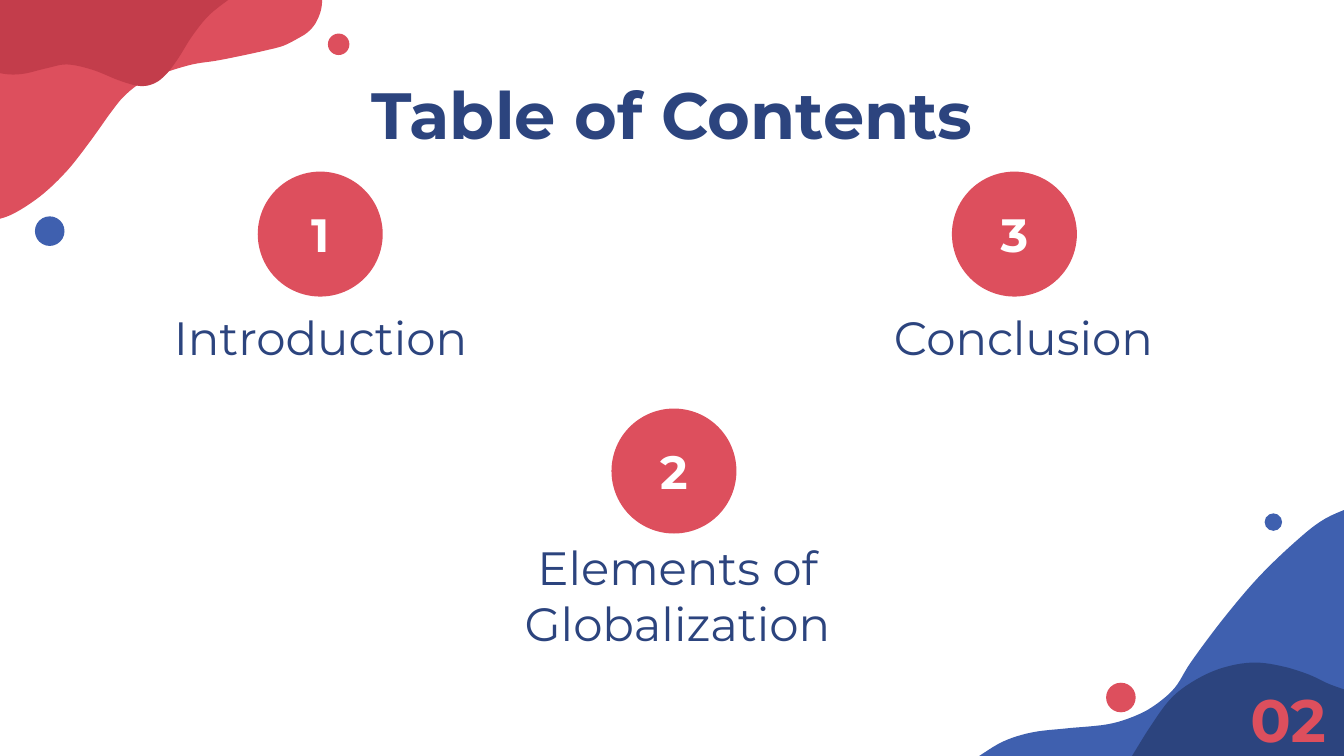
from dataclasses import dataclass

from pptx import Presentation
from pptx.dml.color import RGBColor
from pptx.enum.shapes import MSO_SHAPE
from pptx.enum.text import MSO_ANCHOR, MSO_AUTO_SIZE, PP_ALIGN
from pptx.util import Emu, Inches, Pt

# Grid: 100 columns across a 16:9 slide, square cells
WIDTH = Inches(10)
HEIGHT = Emu(WIDTH * 9 // 16)
CELL = WIDTH / 100
FONT = "Montserrat"
COLORS = {
    "red": "DD4F5D",
    "dark_red": "C33D4B",
    "blue": "3F60AF",
    "navy": "2C447E",
    "white": "FFFFFF",
}
BADGE_SIZE = 9.3
NUMBER_BOX = (8, 5)
LABEL_WIDTH = 31.4
CURVE_STEPS = 6

Point = tuple[float, float]


@dataclass
class Wave:
    color: str
    curve: list[Point]
    corners: list[Point]


@dataclass
class Dot:
    color: str
    x: float
    y: float
    size: float


@dataclass
class Topic:
    number: str
    label: str
    center_x: float
    center_y: float
    label_x: float
    label_y: float
    label_height: float


WAVES = [
    Wave("red",
         [(24, -0.4), (23.9, 0.7), (23.5, 1.7), (22.9, 2.4), (22.1, 2.9), (21.1, 3.4),
          (20, 3.7), (18.2, 4.1), (16.2, 4.5), (14.3, 4.8), (12.3, 5.4), (10.6, 6.1),
          (9.3, 7.1), (8.3, 8.3), (6.8, 10.4), (5, 12.7), (3, 14.6), (0.8, 16), (-1, 16.5)],
         [(-1, -0.1)]),
    Wave("blue",
         [(72.5, 56.5), (74.6, 55.2), (76.8, 54.5), (79.4, 54.2), (82.4, 53.9), (84.4, 53.3),
          (85.9, 52.5), (87.4, 51.2), (88.6, 49.3), (90.9, 46.2), (93.6, 43), (96.4, 40.3),
          (98.6, 38.6), (101.2, 37.5)],
         [(100.3, 56.5)]),
    Wave("navy",
         [(83.9, 56.8), (85.7, 53.9), (87.3, 51.8), (89.3, 50.4), (91.3, 49.6), (93.4, 49.3),
          (95.5, 49.6), (97.4, 50.2), (98.9, 50.9), (100.6, 51.5)],
         [(100.6, 56.8)]),
    Wave("dark_red",
         [(17.4, -0.3), (15.6, 1.1), (14.3, 2.7), (13.3, 4.3), (12.4, 5.5), (11.5, 6.2),
          (10.4, 6.4), (8.9, 6), (6.9, 5.2), (5, 4.8), (3.4, 5.1), (1.7, 5.5), (0.3, 5.5),
          (-1.2, 5.1)],
         [(-1.2, -0.3)]),
]
DOTS = [
    Dot("red", 82.3, 50.8, 2.2),
    Dot("blue", 94.1, 38.2, 1.3),
    Dot("blue", 2.6, 16.1, 2.2),
    Dot("red", 24.4, 2.5, 1.6),
]
TOPICS = [
    Topic("1", "Introduction", 23.83, 17.42, 23.85, 25.1, 4),
    Topic("2", "Elements of Globalization", 50.15, 35.05, 50.4, 44.25, 9.3),
    Topic("3", "Conclusion", 75.48, 17.42, 76.15, 25.1, 4),
]


def cells(count: float) -> Emu:
    return Emu(round(count * CELL))


def paint(shape, color: str) -> None:
    shape.shadow.inherit = False
    shape.fill.solid()
    shape.fill.fore_color.rgb = RGBColor.from_string(COLORS[color])
    shape.line.fill.background()


def smooth(points: list[Point]) -> list[Point]:
    """Catmull-Rom curve through the points."""
    padded = [points[0], *points, points[-1]]
    curve = [points[0]]
    for a, b, c, d in zip(padded, padded[1:], padded[2:], padded[3:]):
        for step in range(1, CURVE_STEPS + 1):
            t = step / CURVE_STEPS
            curve.append(tuple(
                (2 * q + (r - p) * t + (2 * p - 5 * q + 4 * r - s) * t ** 2
                 + (3 * q - p - 3 * r + s) * t ** 3) / 2
                for p, q, r, s in zip(a, b, c, d)))
    return curve


def draw_wave(slide, wave: Wave) -> None:
    outline = [(cells(x), cells(y)) for x, y in smooth(wave.curve) + wave.corners]
    builder = slide.shapes.build_freeform(*outline[0])
    builder.add_line_segments(outline[1:], close=True)
    paint(builder.convert_to_shape(), wave.color)


def draw_dot(slide, dot: Dot) -> None:
    circle = slide.shapes.add_shape(
        MSO_SHAPE.OVAL, cells(dot.x), cells(dot.y), cells(dot.size), cells(dot.size))
    paint(circle, dot.color)


def write(shape, text: str, size: int, color: str, bold: bool = False) -> None:
    frame = shape.text_frame
    frame.text = text
    frame.word_wrap = True
    frame.auto_size = MSO_AUTO_SIZE.NONE
    frame.vertical_anchor = MSO_ANCHOR.MIDDLE
    frame.margin_left = frame.margin_right = Inches(0.1)
    frame.margin_top = frame.margin_bottom = Inches(0.1)
    paragraph = frame.paragraphs[0]
    paragraph.alignment = PP_ALIGN.CENTER
    font = paragraph.runs[0].font
    font.name, font.size, font.bold = FONT, Pt(size), bold
    font.color.rgb = RGBColor.from_string(COLORS[color])


def add_centered_box(slide, x: float, y: float, width: float, height: float):
    return slide.shapes.add_textbox(
        cells(x - width / 2), cells(y - height / 2), cells(width), cells(height))


def draw_topic(slide, topic: Topic) -> None:
    half = BADGE_SIZE / 2
    draw_dot(slide, Dot("red", topic.center_x - half, topic.center_y - half, BADGE_SIZE))
    number = add_centered_box(slide, topic.center_x, topic.center_y, *NUMBER_BOX)
    write(number, topic.number, 25, "white", bold=True)
    label = add_centered_box(
        slide, topic.label_x, topic.label_y, LABEL_WIDTH, topic.label_height)
    write(label, topic.label, 25, "navy")


def main() -> None:
    deck = Presentation()
    deck.slide_width, deck.slide_height = WIDTH, HEIGHT
    slide = deck.slides.add_slide(deck.slide_layouts[5])

    # Corner decoration
    for wave in WAVES[:2]:
        draw_wave(slide, wave)
    for dot in DOTS:
        draw_dot(slide, dot)
    for wave in WAVES[2:]:
        draw_wave(slide, wave)

    # Title
    title = slide.shapes.title
    title.left, title.top = cells(7.9), cells(5.93)
    title.width, title.height = cells(84.2), cells(5)
    write(title, "Table of Contents", 35, "navy", bold=True)

    # Contents
    for topic in TOPICS:
        draw_topic(slide, topic)

    # Page number
    page_number = add_centered_box(slide, 95.85, 53.55, 8.3, 6.4)
    write(page_number, "02", 32, "red", bold=True)
    page_number.text_frame.word_wrap = False
    page_number.text_frame.auto_size = MSO_AUTO_SIZE.SHAPE_TO_FIT_TEXT
    page_number.text_frame.vertical_anchor = MSO_ANCHOR.TOP
    page_number.text_frame.margin_top = page_number.text_frame.margin_bottom = Inches(0.05)

    deck.save("out.pptx")


if __name__ == "__main__":
    main()
